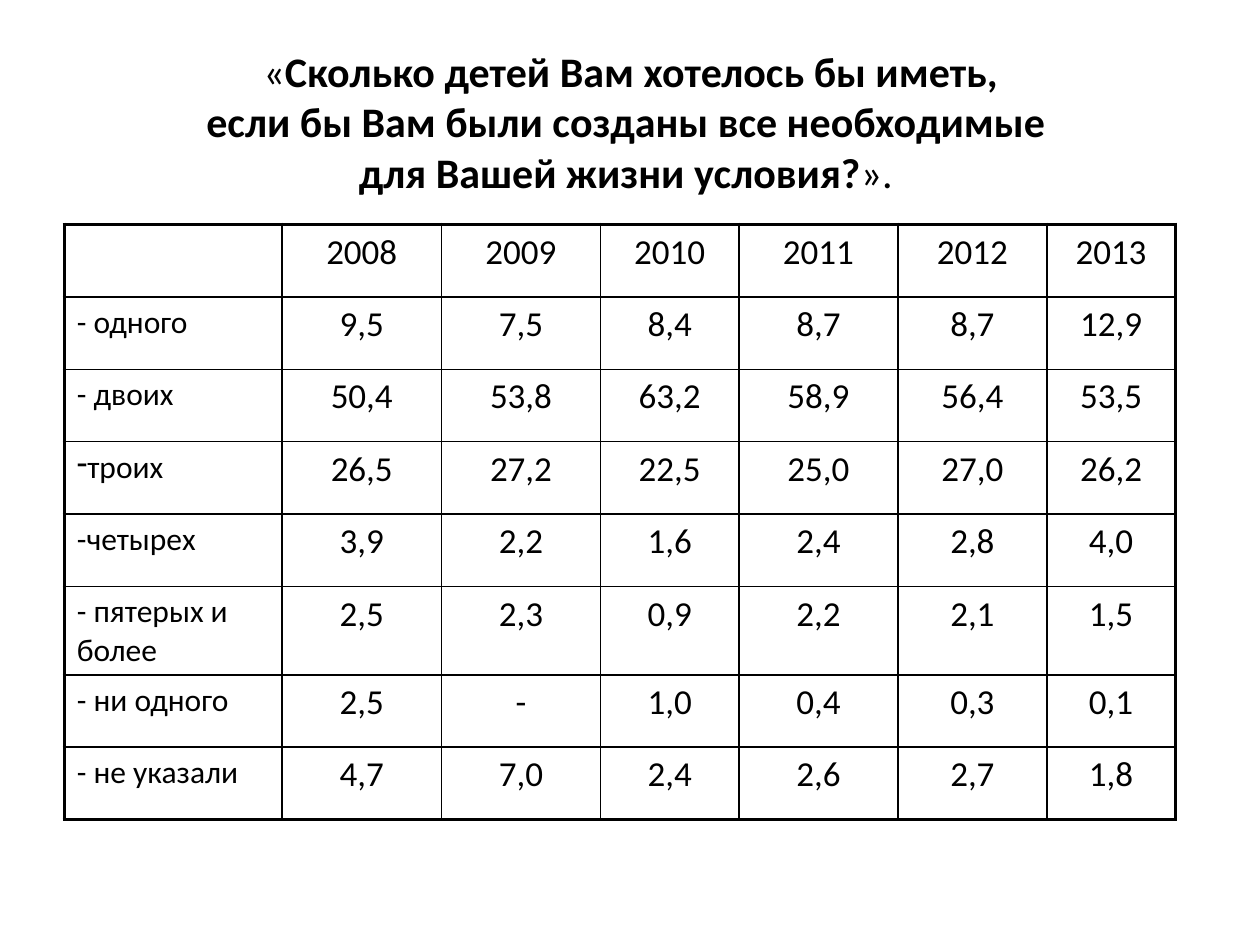
from lxml import etree
from pptx import Presentation
from pptx.dml.color import RGBColor
from pptx.enum import text
from pptx.oxml import ns
from pptx.util import Pt

INK = "000000"
FACE = "Calibri"
TITLE = [
    ("«", False),
    ("Сколько детей Вам хотелось бы иметь,\v"
     "если бы Вам были созданы все необходимые \v"
     "для Вашей жизни условия?", True),
    ("». ", False),
]
ROWS = [
    ["", "2008", "2009", "2010", "2011", "2012", "2013"],
    ["- одного", "9,5", "7,5", "8,4", "8,7", "8,7", "12,9"],
    ["- двоих", "50,4", "53,8", "63,2", "58,9", "56,4", "53,5"],
    ["троих", "26,5", "27,2", "22,5", "25,0", "27,0", "26,2"],
    ["-четырех", "3,9", "2,2", "1,6", "2,4", "2,8", "4,0"],
    ["- пятерых и более", "2,5", "2,3", "0,9", "2,2", "2,1", "1,5"],
    ["- ни одного", "2,5", "-", "1,0", "0,4", "0,3", "0,1"],
    ["- не указали", "4,7", "7,0", "2,4", "2,6", "2,7", "1,8"],
]
WIDTHS = [124.5, 91, 91, 79, 91, 85, 73.5]
BULLETED = "троих"


def color(code):
    return RGBColor.from_string(code)


def style(para, size, align):
    para.alignment = align
    para.font.name = FACE
    para.font.size = Pt(size)
    para.font.color.rgb = color(INK)


def border(cell, side, width):
    props = cell._tc.get_or_add_tcPr()
    line = etree.SubElement(props, ns.qn(f"a:ln{side}"), w=str(Pt(width)))
    fill = etree.SubElement(line, ns.qn("a:solidFill"))
    etree.SubElement(fill, ns.qn("a:srgbClr"), val=INK)


def add_title(slide, left, top, width, height):
    frame = slide.shapes.add_textbox(
        Pt(left), Pt(top), Pt(width), Pt(height)).text_frame
    frame.word_wrap = True
    frame.vertical_anchor = text.MSO_ANCHOR.TOP
    frame.margin_top = Pt(11)
    para = frame.paragraphs[0]
    for words, bold in TITLE:
        for part, line in enumerate(words.split("\v")):
            if part:
                para.add_line_break()
            run = para.add_run()
            run.text = line
            run.font.bold = bold
    style(para, 24, text.PP_ALIGN.CENTER)


def add_grid(slide, left, top, width, height):
    last_row, last_col = len(ROWS) - 1, len(WIDTHS) - 1
    table = slide.shapes.add_table(
        len(ROWS), len(WIDTHS), Pt(left), Pt(top), Pt(width), Pt(height)).table
    table.first_row = table.horz_banding = False
    for col, size in zip(table.columns, WIDTHS):
        col.width = Pt(size)
    for r, row in enumerate(ROWS):
        table.rows[r].height = Pt(height / len(ROWS))
        for c, words in enumerate(row):
            cell = table.cell(r, c)
            cell.text = words
            para = cell.text_frame.paragraphs[0]
            if c:
                style(para, 20, text.PP_ALIGN.CENTER)
            else:
                style(para, 18, text.PP_ALIGN.LEFT)
            if words == BULLETED:
                props = para._p.get_or_add_pPr()
                props.insert(0, etree.Element(ns.qn("a:buChar"), char="-"))
            edges = {"L": c == 0, "R": c == last_col,
                     "T": r == 0, "B": r == last_row}
            for side, outer in edges.items():
                border(cell, side, 2.25 if outer else 1)
            cell.fill.background()


def main():
    deck = Presentation()
    deck.slide_width, deck.slide_height = Pt(720), Pt(540)
    slide = deck.slides.add_slide(deck.slide_layouts[6])
    add_title(slide, 36.75, 15, 647.25, 96.5)
    add_grid(slide, 36.75, 128.25, sum(WIDTHS), 331.2)
    deck.save("out.pptx")


if __name__ == "__main__":
    main()
